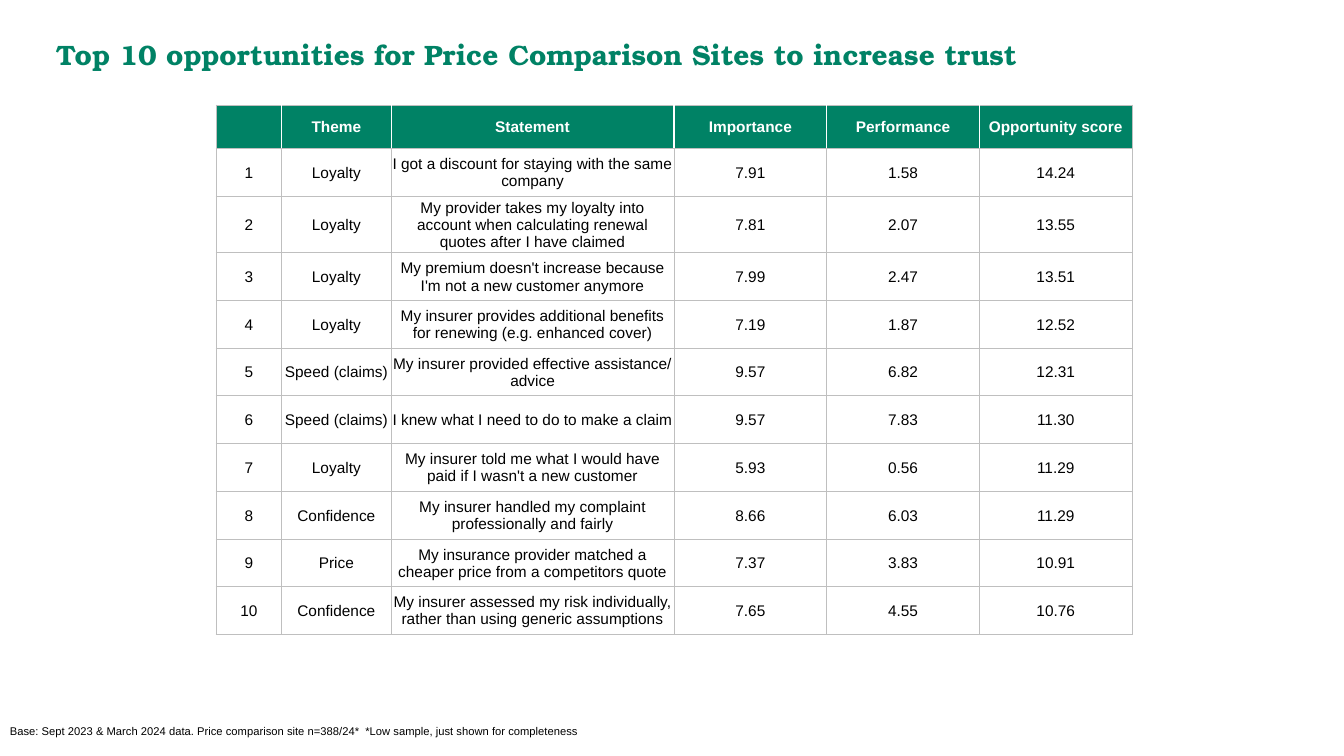
from lxml import etree
from pptx import Presentation
from pptx.dml.color import RGBColor
from pptx.enum.text import MSO_ANCHOR, PP_ALIGN
from pptx.oxml.ns import qn
from pptx.util import Pt

MIDDLE, CENTER = MSO_ANCHOR.MIDDLE, PP_ALIGN.CENTER

TITLE = "Top 10 opportunities for Price Comparison Sites to increase trust"
BASE_NOTE = "Base: Sept 2023 & March 2024 data. Price comparison site n=388/24*  *Low sample, just shown for completeness"
HEADINGS = ("", "Theme", "Statement", "Importance", "Performance", "Opportunity score")
OPPORTUNITIES = [
    ("Loyalty", "I got a discount for staying with the same company", 7.91, 1.58, 14.24),
    ("Loyalty", "My provider takes my loyalty into account when calculating renewal quotes after I have claimed", 7.81, 2.07, 13.55),
    ("Loyalty", "My premium doesn't increase because I'm not a new customer anymore", 7.99, 2.47, 13.51),
    ("Loyalty", "My insurer provides additional benefits for renewing (e.g. enhanced cover)", 7.19, 1.87, 12.52),
    ("Speed (claims)", "My insurer provided effective assistance/ advice", 9.57, 6.82, 12.31),
    ("Speed (claims)", "I knew what I need to do to make a claim", 9.57, 7.83, 11.30),
    ("Loyalty", "My insurer told me what I would have paid if I wasn't a new customer", 5.93, 0.56, 11.29),
    ("Confidence", "My insurer handled my complaint professionally and fairly", 8.66, 6.03, 11.29),
    ("Price", "My insurance provider matched a cheaper price from a competitors quote", 7.37, 3.83, 10.91),
    ("Confidence", "My insurer assessed my risk individually, rather than using generic assumptions", 7.65, 4.55, 10.76),
]

THEME = {
    "green": "008265", "white": "FFFFFF", "black": "000000", "grid": "BFBFBF",
    "title_font": "TeX Gyre Bonum", "body_font": "Arial",
    "title_size": 20, "table_size": 11, "note_size": 8,
}
SLIDE_SIZE = (960, 540)
TITLE_BOX = (33, 23, 884, 32)
NOTE_BOX = (0, 514, 797, 26)
TABLE_LEFT, TABLE_TOP = 154.4, 75
COLUMN_WIDTHS = (46.8, 78.2, 202.1, 109.1, 109.1, 109.1)
HEADER_HEIGHT, ROW_HEIGHT = 31.2, 34.1
SIDES = ("L", "R", "T", "B")


def style(paragraph, font, size, color, bold=False):
    for run in paragraph.runs:
        run.font.name = THEME[font]
        run.font.size = Pt(THEME[size])
        run.font.bold = bold
        run.font.color.rgb = RGBColor.from_string(THEME[color])


def add_line_of_text(slide, box, words, *look):
    frame = slide.shapes.add_textbox(*map(Pt, box)).text_frame
    frame.word_wrap = True
    frame.text = words
    style(frame.paragraphs[0], *look)


def set_borders(cell, white_sides):
    properties = cell._tc.get_or_add_tcPr()
    for position, side in enumerate(SIDES):
        color, width = ("white", 1) if side in white_sides else ("grid", 0.75)
        line = etree.Element(qn(f"a:ln{side}"), w=str(Pt(width)))
        fill = etree.SubElement(line, qn("a:solidFill"))
        etree.SubElement(fill, qn("a:srgbClr"), val=THEME[color])
        properties.insert(position, line)


def fill_cell(cell, words, is_header, white_sides):
    cell.margin_left = cell.margin_right = cell.margin_top = Pt(0.7)
    cell.margin_bottom = Pt(0)
    cell.vertical_anchor = MIDDLE
    cell.text = words
    paragraph = cell.text_frame.paragraphs[0]
    paragraph.alignment = CENTER
    style(paragraph, "body_font", "table_size", "white" if is_header else "black", is_header)
    if is_header:
        cell.fill.solid()
        cell.fill.fore_color.rgb = RGBColor.from_string(THEME["green"])
    else:
        cell.fill.background()
    set_borders(cell, white_sides)


def add_ranking(slide):
    ranked = [
        (str(rank), theme, statement, *(f"{score:.2f}" for score in scores))
        for rank, (theme, statement, *scores) in enumerate(OPPORTUNITIES, 1)
    ]
    rows = [HEADINGS, *ranked]
    heights = [HEADER_HEIGHT] + [ROW_HEIGHT] * len(ranked)
    box = (TABLE_LEFT, TABLE_TOP, sum(COLUMN_WIDTHS), sum(heights))
    ranking = slide.shapes.add_table(len(rows), len(HEADINGS), *map(Pt, box)).table
    ranking.horz_banding = False
    for column, width in zip(ranking.columns, COLUMN_WIDTHS):
        column.width = Pt(width)
    last = len(HEADINGS) - 1
    for r, (row, height) in enumerate(zip(rows, heights)):
        ranking.rows[r].height = Pt(height)
        for c, words in enumerate(row):
            is_header = r == 0
            white_sides = ("L" * (c > 0) + "R" * (c < last)) if is_header else ""
            fill_cell(ranking.cell(r, c), words, is_header, white_sides)


def main():
    deck = Presentation()
    deck.slide_width, deck.slide_height = map(Pt, SLIDE_SIZE)
    slide = deck.slides.add_slide(deck.slide_layouts[6])
    add_line_of_text(slide, TITLE_BOX, TITLE, "title_font", "title_size", "green", True)
    add_ranking(slide)
    add_line_of_text(slide, NOTE_BOX, BASE_NOTE, "body_font", "note_size", "black")
    deck.save("out.pptx")


if __name__ == "__main__":
    main()
